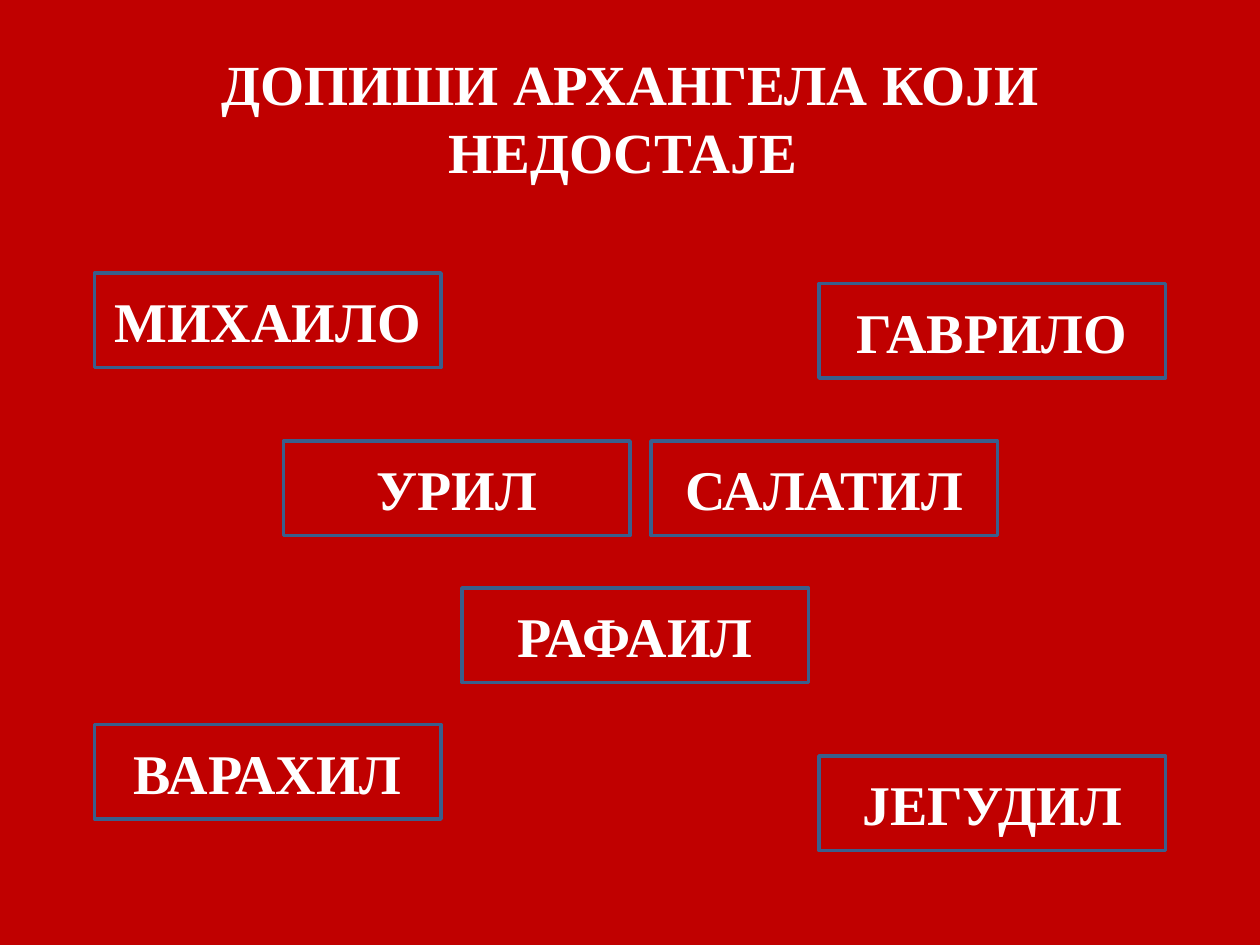
import pptx
import pptx.util
from pptx.dml.color import RGBColor
from pptx.enum.shapes import MSO_SHAPE
from pptx.enum.text import MSO_ANCHOR, PP_ALIGN

RED = RGBColor(0xC0, 0x00, 0x00)
BLUE = RGBColor(0x3A, 0x5F, 0x8C)
WHITE = RGBColor(0xFF, 0xFF, 0xFF)
FONT = "Times New Roman"

# The slide is a grid of 120 columns and 90 rows, 12 cells to the inch
CELL = pptx.util.Inches(1) // 12
COLS, ROWS = 120, 90
BOX_W, BOX_H = 33, 9

# Name, column, row
NAMES = [
    ("МИХАИЛО", 9, 26),
    ("УРИЛ", 27, 42),
    ("РАФАИЛ", 44, 56),
    ("САЛАТИЛ", 62, 42),
    ("ВАРАХИЛ", 9, 69),
    ("ЈЕГУДИЛ", 78, 72),
    ("ГАВРИЛО", 78, 27),
]


def grid(*cells):
    return [round(n * CELL) for n in cells]


def write(shape, text, size):
    frame = shape.text_frame
    frame.word_wrap = True
    frame.vertical_anchor = MSO_ANCHOR.MIDDLE
    line = frame.paragraphs[0]
    line.text = text
    line.alignment = PP_ALIGN.CENTER
    line.font.name = FONT
    line.font.size = pptx.util.Pt(size)
    line.font.bold = True
    line.font.color.rgb = WHITE


def add_title(slide, text):
    box = slide.shapes.add_textbox(*grid(6, 3.6, 108, 15))
    write(box, text, 32.4)


def add_name(slide, name, col, row):
    box = slide.shapes.add_shape(
        MSO_SHAPE.RECTANGLE, *grid(col, row, BOX_W, BOX_H))
    box.shadow.inherit = False
    box.fill.solid()
    box.fill.fore_color.rgb = RED
    box.line.color.rgb = BLUE
    box.line.width = pptx.util.Pt(2)
    write(box, name, 32)


def main():
    deck = pptx.Presentation()
    deck.slide_width, deck.slide_height = grid(COLS, ROWS)
    slide = deck.slides.add_slide(deck.slide_layouts[6])

    # Background
    slide.background.fill.solid()
    slide.background.fill.fore_color.rgb = RED

    # Heading and archangel names
    add_title(slide, "ДОПИШИ АРХАНГЕЛА КОЈИ НЕДОСТАЈЕ ")
    for name, col, row in NAMES:
        add_name(slide, name, col, row)

    deck.save("out.pptx")


if __name__ == "__main__":
    main()
